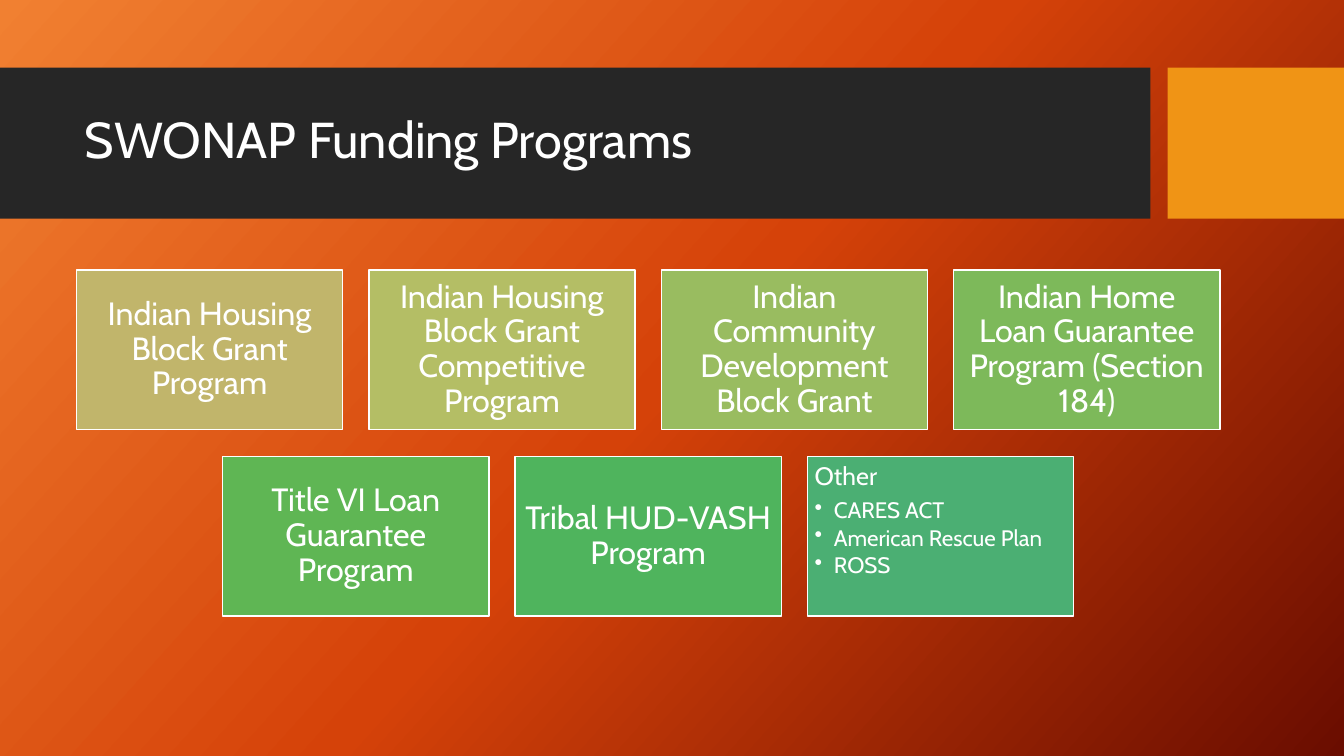
from copy import deepcopy
from pptx import Presentation
from pptx import util as u
from pptx.dml.color import RGBColor
from pptx.enum import shapes, text
from pptx.oxml import parse_xml
from pptx.oxml.ns import nsdecls, qn

PX = 9144  # EMU per px, 100 px to the inch
FONT = "Cabin"
COLORS = {
    "white": "FFFFFF", "band": "262626", "accent": "F09415",
    "glow": "F18031", "flame": "D54209", "ember": "6A0D00",
    "sand": "C1B56B", "olive": "B4BE65", "moss": "99BC60", "leaf": "7DB95A",
    "grass": "5FB654", "green": "4FB45D", "jade": "4BAF73",
}


def color(name):
    return RGBColor.from_string(COLORS[name])


class FundingSlide:
    def __init__(self, presentation):
        self.slide = presentation.slides.add_slide(presentation.slide_layouts[5])

    def background(self, names, angle):
        fill = self.slide.background.fill
        fill.gradient()
        stop_list = self.slide.element.find(".//" + qn("a:gsLst"))
        while len(stop_list) < len(names):
            stop_list.append(deepcopy(stop_list[0]))
        for index, (stop, name) in enumerate(zip(fill.gradient_stops, names)):
            stop.color.rgb = color(name)
            stop.position = index / (len(names) - 1)
        fill.gradient_angle = 360 - angle

    def place(self, shape, left, top, width, height):
        shape.left, shape.top = left * PX, top * PX
        shape.width, shape.height = width * PX, height * PX

    def box(self, left, top, width, height, fill, line=None):
        shape = self.slide.shapes.add_shape(
            shapes.MSO_SHAPE.RECTANGLE, left * PX, top * PX, width * PX, height * PX)
        shape.shadow.inherit = False
        shape.fill.solid()
        shape.fill.fore_color.rgb = color(fill)
        if line:
            shape.line.color.rgb = color(line)
            shape.line.width = u.Pt(1)
        else:
            shape.line.fill.background()
        return shape

    def frame(self, shape, anchor, inset):
        frame = shape.text_frame
        frame.word_wrap = True
        frame.auto_size = text.MSO_AUTO_SIZE.NONE
        frame.vertical_anchor = anchor
        frame.margin_left = frame.margin_right = inset * PX
        frame.margin_top = frame.margin_bottom = inset * PX
        return frame

    def style(self, paragraph, size, align=text.PP_ALIGN.LEFT, after=0):
        paragraph.alignment = align
        paragraph.line_spacing = 0.9
        paragraph.space_before = u.Pt(0)
        paragraph.space_after = u.Pt(after)
        for run in paragraph.runs:
            run.font.name = FONT
            run.font.size = u.Pt(size)
            run.font.color.rgb = color("white")

    def bullet(self, paragraph, indent):
        properties = paragraph._p.get_or_add_pPr()
        properties.set("marL", str(indent * PX))
        properties.set("indent", str(-indent * PX))
        properties.append(parse_xml(f'<a:buChar {nsdecls("a")} char="•"/>'))

    def title(self, wording, left, top, width, height):
        shape = self.slide.shapes.title
        self.place(shape, left, top, width, height)
        self.slide.shapes.element.append(shape.element)  # in front of the band
        frame = self.frame(shape, text.MSO_ANCHOR.MIDDLE, 10)
        frame.text = wording
        self.style(frame.paragraphs[0], 36)

    def program(self, shape, name):
        frame = self.frame(shape, text.MSO_ANCHOR.MIDDLE, 10)
        frame.text = name
        self.style(frame.paragraphs[0], 23, text.PP_ALIGN.CENTER, 8)

    def program_list(self, shape, heading, items):
        frame = self.frame(shape, text.MSO_ANCHOR.TOP, 7)
        frame.text = heading
        self.style(frame.paragraphs[0], 18, after=6)
        for item in items:
            paragraph = frame.add_paragraph()
            paragraph.text = item
            paragraph.level = 1
            self.bullet(paragraph, 19)
            self.style(paragraph, 16, after=2.4)


PROGRAM_ROWS = [
    [("Indian Housing Block Grant Program", "sand"),
     ("Indian Housing Block Grant Competitive Program", "olive"),
     ("Indian Community Development Block Grant", "moss"),
     ("Indian Home Loan Guarantee Program (Section 184)", "leaf")],
    [("Title VI Loan Guarantee Program", "grass"),
     ("Tribal HUD-VASH Program", "green"),
     ("Other", "jade")],
]
OTHER_PROGRAMS = ["CARES ACT", "American Rescue Plan", "ROSS"]
BOX_WIDTH, BOX_HEIGHT, GAP = 264, 158, 26
GRID_CENTER, GRID_TOP = 643, 268


def main():
    presentation = Presentation()
    presentation.slide_width, presentation.slide_height = 1333 * PX, 750 * PX
    page = FundingSlide(presentation)

    # Background and title band
    page.background(["glow", "flame", "ember"], 42)
    page.box(0, 67, 1141, 150, "band")
    page.box(1158, 67, 175, 150, "accent")
    page.title("SWONAP Funding Programs", 74, 82, 1051, 118)

    # Program boxes, each row centred
    for row, programs in enumerate(PROGRAM_ROWS):
        row_width = len(programs) * (BOX_WIDTH + GAP) - GAP
        top = GRID_TOP + row * (BOX_HEIGHT + GAP + 1)
        for column, (name, fill) in enumerate(programs):
            left = GRID_CENTER - row_width // 2 + column * (BOX_WIDTH + GAP)
            shape = page.box(left, top, BOX_WIDTH, BOX_HEIGHT, fill, "white")
            if name == "Other":
                page.program_list(shape, name, OTHER_PROGRAMS)
            else:
                page.program(shape, name)

    presentation.save("out.pptx")


if __name__ == "__main__":
    main()
